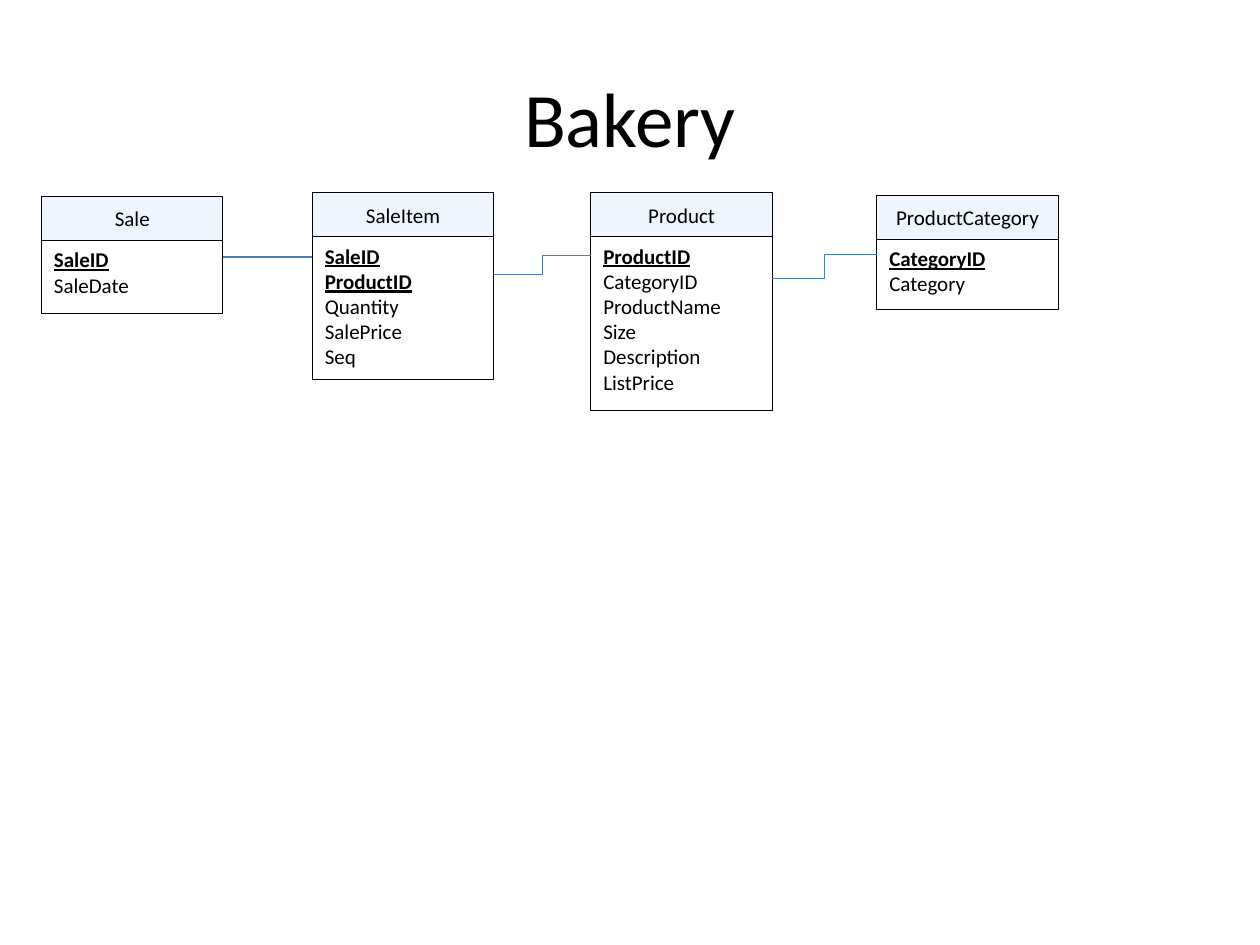
from pptx import Presentation
from pptx.dml.color import RGBColor
from pptx.enum.shapes import MSO_CONNECTOR, MSO_SHAPE
from pptx.enum.text import MSO_ANCHOR, PP_ALIGN
from pptx.oxml.ns import qn
from pptx.util import Inches, Pt
from lxml import etree

RECT = MSO_SHAPE.RECTANGLE
LINE, ELBOW = MSO_CONNECTOR.STRAIGHT, MSO_CONNECTOR.ELBOW
TOP, MIDDLE = MSO_ANCHOR.TOP, MSO_ANCHOR.MIDDLE
LEFT, CENTER = PP_ALIGN.LEFT, PP_ALIGN.CENTER
BLACK = RGBColor(0x00, 0x00, 0x00)
PALE = RGBColor(0xEF, 0xF5, 0xFF)
BLUE = RGBColor(0x4B, 0x7E, 0xBC)

WIDE, HIGH = 10, 7.5
CARD, HEAD = 1.44, 0.35
TITLE = "Bakery"
TABLES = [
    ("Sale", 0.33, 1.56, 0.58, ["SaleID"], ["SaleDate"]),
    ("SaleItem", 2.48, 1.53, 1.13, ["SaleID", "ProductID"],
     ["Quantity", "SalePrice", "Seq"]),
    ("Product", 4.69, 1.53, 1.38, ["ProductID"],
     ["CategoryID", "ProductName", "Size", "Description", "ListPrice"]),
    ("ProductCategory", 6.96, 1.55, 0.56, ["CategoryID"], ["Category"]),
]
LINKS = [(LINE, 2.04, 2.04), (ELBOW, 2.18, 2.03), (ELBOW, 2.21, 2.02)]


def write(shape, rows, size=12, keys=0, align=LEFT, anchor=TOP):
    frame = shape.text_frame
    frame.word_wrap = True
    frame.vertical_anchor = anchor
    for i, row in enumerate(rows):
        para = frame.paragraphs[0] if i == 0 else frame.add_paragraph()
        para.alignment = align
        run = para.add_run()
        run.text = row
        font = run.font
        font.name, font.size = "Calibri", Pt(size)
        font.color.rgb = BLACK
        font.bold = font.underline = i < keys


def box(slide, left, top, height, fill=None):
    shape = slide.shapes.add_shape(
        RECT, Inches(left), Inches(top), Inches(CARD), Inches(height))
    shape.shadow.inherit = False
    if fill is None:
        shape.fill.background()
    else:
        shape.fill.solid()
        shape.fill.fore_color.rgb = fill
    shape.line.color.rgb = BLACK
    shape.line.width = Pt(0.5)
    return shape


def link(slide, kind, start, end):
    wire = slide.shapes.add_connector(kind, *map(Inches, start + end))
    wire.line.color.rgb = BLUE
    wire.line.width = Pt(0.75)
    etree.SubElement(wire._element.spPr, qn("a:effectLst"))


def main():
    deck = Presentation()
    deck.slide_width, deck.slide_height = Inches(WIDE), Inches(HIGH)
    slide = deck.slides.add_slide(deck.slide_layouts[6])
    title = slide.shapes.add_textbox(
        Inches(WIDE * 0.05), Inches(HIGH * 0.04),
        Inches(WIDE * 0.9), Inches(HIGH / 6))
    write(title, [TITLE], size=44, align=CENTER, anchor=MIDDLE)

    for name, left, top, height, keys, rest in TABLES:
        body = box(slide, left, top + HEAD, height)
        write(body, keys + rest, keys=len(keys))
        head = box(slide, left, top, HEAD, PALE)
        write(head, [name], align=CENTER, anchor=MIDDLE)

    for here, there, (kind, start, end) in zip(TABLES, TABLES[1:], LINKS):
        link(slide, kind, (here[1] + CARD, start), (there[1], end))

    deck.save("out.pptx")


if __name__ == "__main__":
    main()
